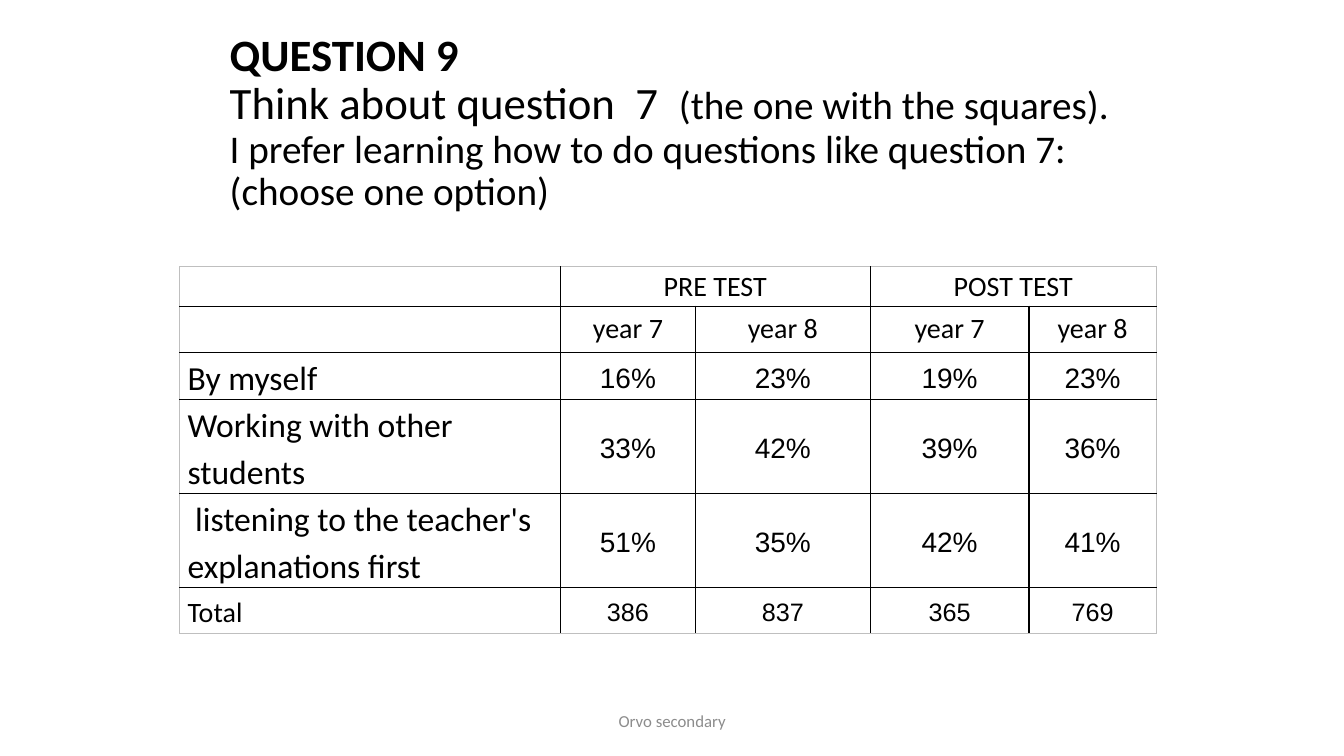
import lxml.etree
import pptx
import pptx.dml.color
import pptx.enum.text
import pptx.oxml.ns
import pptx.util

COLOURS = {"ink": "000000", "paper": "FFFFFF", "edge": "BFBFBF", "footer": "8C8C8C"}
ALIGN = pptx.enum.text.PP_ALIGN
MIDDLE = pptx.enum.text.MSO_ANCHOR.MIDDLE

COLUMN_WIDTHS = [272.1, 96.5, 124.8, 113.4, 91]
ROW_HEIGHTS = [28.4, 33, 33.5, 67.3, 67.3, 32.6]
HEADINGS = [
    ["", "PRE TEST", "", "POST TEST", ""],
    ["", "year 7", "year 8", "year 7", "year 8"],
]
ANSWERS = [
    ["By myself", "16%", "23%", "19%", "23%"],
    ["Working with other students", "33%", "42%", "39%", "36%"],
    [" listening to the teacher's explanations first", "51%", "35%", "42%", "41%"],
]
TOTALS = ["Total", "386", "837", "365", "769"]


class SlideBuilder:
    body_font = "Calibri"
    figure_font = "Arial"

    def __init__(self, slide):
        self.slide = slide

    def colour(self, name):
        return pptx.dml.color.RGBColor.from_string(COLOURS[name])

    def run(self, para, text, size, font=body_font, colour="ink", bold=False):
        for index, line in enumerate(text.split("\n")):
            if index:
                para.add_line_break()
            if line:
                span = para.add_run()
                span.text = line
                span.font.size = pptx.util.Pt(size)
                span.font.name = font
                span.font.bold = bold
                span.font.color.rgb = self.colour(colour)

    def text(self, left, top, width, height, align, spacing=1.0):
        box = self.slide.shapes.add_textbox(*map(pptx.util.Pt, (left, top, width, height)))
        frame = box.text_frame
        frame.word_wrap = True
        frame.vertical_anchor = MIDDLE
        para = frame.paragraphs[0]
        para.alignment = align
        para.line_spacing = spacing
        return para

    def border(self, cell, side, colour, width):
        properties = cell._tc.get_or_add_tcPr()
        name = pptx.oxml.ns.qn
        line = lxml.etree.SubElement(properties, name(f"a:ln{side}"), w=str(pptx.util.Pt(width)))
        fill = lxml.etree.SubElement(line, name("a:solidFill"))
        lxml.etree.SubElement(fill, name("a:srgbClr"), val=COLOURS[colour])

    def table(self, left, top, widths, heights, paired_columns):
        frame = self.slide.shapes.add_table(
            len(heights), len(widths),
            *map(pptx.util.Pt, (left, top, sum(widths), sum(heights))))
        table = frame.table
        table.first_row = False
        table.horz_banding = False
        for column, width in zip(table.columns, widths):
            column.width = pptx.util.Pt(width)
        for row, height in zip(table.rows, heights):
            row.height = pptx.util.Pt(height)
        for column in paired_columns:
            table.cell(0, column).merge(table.cell(0, column + 1))
        last_row, last_column = len(heights) - 1, len(widths) - 1
        for r in range(len(heights)):
            for c in range(len(widths)):
                cell = table.cell(r, c)
                end_column = c + cell.span_width - 1 if cell.is_merge_origin else c
                outer = {"L": c == 0, "R": end_column == last_column,
                         "T": r == 0, "B": r == last_row}
                for side, is_outer in outer.items():
                    self.border(cell, side, *(("edge", 0.5) if is_outer else ("ink", 1)))
                cell.fill.solid()
                cell.fill.fore_color.rgb = self.colour("paper")
                cell.vertical_anchor = MIDDLE
                cell.margin_left = cell.margin_right = pptx.util.Pt(5.8)
                cell.margin_top = cell.margin_bottom = 0
        return table

    def row(self, table, index, values, label_size, value_size, font, spacing):
        for column, value in enumerate(values):
            if not value:
                continue
            para = table.cell(index, column).text_frame.paragraphs[0]
            para.line_spacing = spacing
            para.alignment = ALIGN.CENTER if column else ALIGN.LEFT
            if column:
                self.run(para, value, value_size, font)
            else:
                self.run(para, value, label_size)


def main():
    deck = pptx.Presentation()
    deck.slide_width = pptx.util.Pt(960)
    deck.slide_height = pptx.util.Pt(540)
    page = SlideBuilder(deck.slides.add_slide(deck.slide_layouts[6]))

    title = page.text(157, 43.2, 648, 90, ALIGN.LEFT, 0.9)
    page.run(title, "QUESTION 9\n", 32, bold=True)
    page.run(title, "Think about question  7  ", 32)
    page.run(title, "(the one with the squares).\n"
             "I prefer learning how to do questions like question 7: (choose one option)", 28)

    table = page.table(128.2, 190.4, COLUMN_WIDTHS, ROW_HEIGHTS, (1, 3))
    for index, values in enumerate(HEADINGS):
        page.row(table, index, values, 20, 20, page.body_font, 1.0)
    for index, values in enumerate(ANSWERS, len(HEADINGS)):
        page.row(table, index, values, 24, 20, page.figure_font, 1.15)
    page.row(table, len(ROW_HEIGHTS) - 1, TOTALS, 20, 18, page.figure_font, 1.15)

    footer = page.text(318.2, 500.4, 324, 28.8, ALIGN.CENTER)
    page.run(footer, "Orvo secondary", 12, colour="footer")
    deck.save("out.pptx")


if __name__ == "__main__":
    main()
